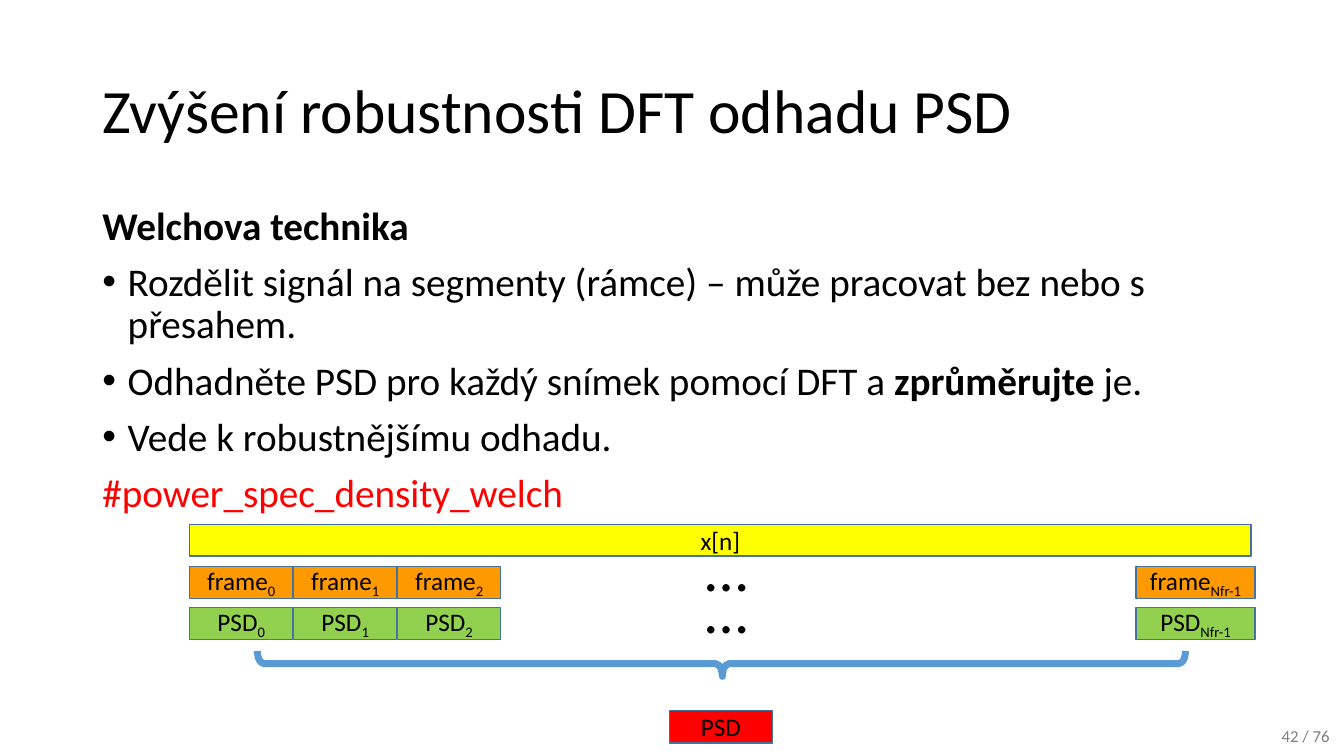
import pptx
import pptx.dml.color
import pptx.enum.shapes
import pptx.enum.text
import pptx.util
from lxml import etree
from pptx.oxml.ns import qn

Cm, Pt = pptx.util.Cm, pptx.util.Pt
ALIGN = pptx.enum.text.PP_ALIGN
MIDDLE = pptx.enum.text.MSO_ANCHOR.MIDDLE
SHAPE = pptx.enum.shapes.MSO_SHAPE
COLORS = {
    "text": "000000", "accent": "FF0000", "number": "808080",
    "signal": "FFFF00", "frame": "FF9900", "psd": "92D050", "average": "FF0000",
    "outline": "43739E", "brace": "5B9BD5",
}


def rgb(name):
    return pptx.dml.color.RGBColor.from_string(COLORS[name])


def add_text(place, spans, size, color="text", align=ALIGN.LEFT, fill=None,
             anchor=pptx.enum.text.MSO_ANCHOR.TOP, spacing=1.0):
    """Add a text box, or a rectangle when fill is given; spans are (text, style)."""
    left, top, width, height = map(Cm, place)
    if fill:
        box = page.shapes.add_shape(SHAPE.RECTANGLE, left, top, width, height)
        box.shadow.inherit = False
        box.fill.solid()
        box.fill.fore_color.rgb = rgb(fill)
        box.line.color.rgb = rgb("outline")
        box.line.width = Pt(1)
    else:
        box = page.shapes.add_textbox(left, top, width, height)
    frame = box.text_frame
    frame.word_wrap = True
    frame.vertical_anchor = anchor
    para = frame.paragraphs[0]
    para.alignment = align
    para.line_spacing = spacing
    for text, style in spans:
        span = para.add_run()
        span.text = text
        span.font.name = "Calibri"
        span.font.size = Pt(size)
        span.font.color.rgb = rgb(color)
        if style == "sub":
            span.font._element.set("baseline", "-25000")
    return box


deck = pptx.Presentation()
deck.slide_width, deck.slide_height = Cm(33.87), Cm(19.05)
page = deck.slides.add_slide(deck.slide_layouts[6])

# Title
add_text((2.33, 1.01, 29.21, 3.68), [("Zvýšení robustnosti DFT odhadu PSD", "")], 44,
         anchor=MIDDLE, spacing=0.9)

# Body: bullet flag, colour, (text, bold) runs
body = [
    (False, "text", [("Welchova technika", True)]),
    (True, "text", [("Rozdělit signál na segmenty (rámce) – může pracovat bez nebo s přesahem.", False)]),
    (True, "text", [("Odhadněte PSD pro každý snímek pomocí DFT a ", False),
                    ("zprůměrujte", True), (" je.", False)]),
    (True, "text", [("Vede k robustnějšímu odhadu.", False)]),
    (False, "accent", [("#power_spec_density_welch", False)]),
]
body_box = page.shapes.add_textbox(Cm(2.33), Cm(5.07), Cm(29.21), Cm(12.09))
body_box.text_frame.word_wrap = True
for index, (bulleted, color, spans) in enumerate(body):
    para = body_box.text_frame.add_paragraph() if index else body_box.text_frame.paragraphs[0]
    para.line_spacing = 0.9
    para.space_before = Pt(10)
    if bulleted:
        properties = para._p.get_or_add_pPr()
        properties.set("marL", str(Cm(0.64)))
        properties.set("indent", str(-Cm(0.64)))
        etree.SubElement(properties, qn("a:buFont")).set("typeface", "Arial")
        etree.SubElement(properties, qn("a:buChar")).set("char", "•")
    for text, bold in spans:
        span = para.add_run()
        span.text = text
        span.font.name = "Calibri"
        span.font.size = Pt(28)
        span.font.bold = bold
        span.font.color.rgb = rgb(color)

# Signal bar
cell = {"size": 18, "align": ALIGN.CENTER, "anchor": MIDDLE}
add_text((4.78, 13.21, 26.75, 0.8), [("x[n]", "")], fill="signal", **cell)

# Rows of frames and their spectra
for label, fill, top in (("frame", "frame", 14.27), ("PSD", "psd", 15.31)):
    for number in range(3):
        add_text((4.78 + 2.62 * number, top, 2.6, 0.81),
                 [(label, ""), (str(number), "sub")], fill=fill, **cell)
    add_text((17.53, top - 0.15, 2.21, 0.58), [("…", "")], 44, anchor=MIDDLE, spacing=0.9)
    add_text((28.63, top, 3, 0.81), [(label, ""), ("Nfr-1", "sub")], fill=fill, **cell)

# Brace and averaged spectrum
brace = page.shapes.add_shape(SHAPE.RIGHT_BRACE, Cm(17.86), Cm(5.03), Cm(0.64), Cm(23.39))
brace.rotation = 90
brace.adjustments[0] = 0.264
brace.adjustments[1] = 0.499
brace.shadow.inherit = False
brace.fill.background()
brace.line.color.rgb = rgb("brace")
brace.line.width = Pt(5)
add_text((16.87, 17.91, 2.6, 0.81), [("PSD", "")], fill="average", **cell)

# Page number
add_text((31.55, 18.16, 2.21, 0.84), [("42 / 76", "")], 12, "number", ALIGN.RIGHT)

deck.save("out.pptx")
